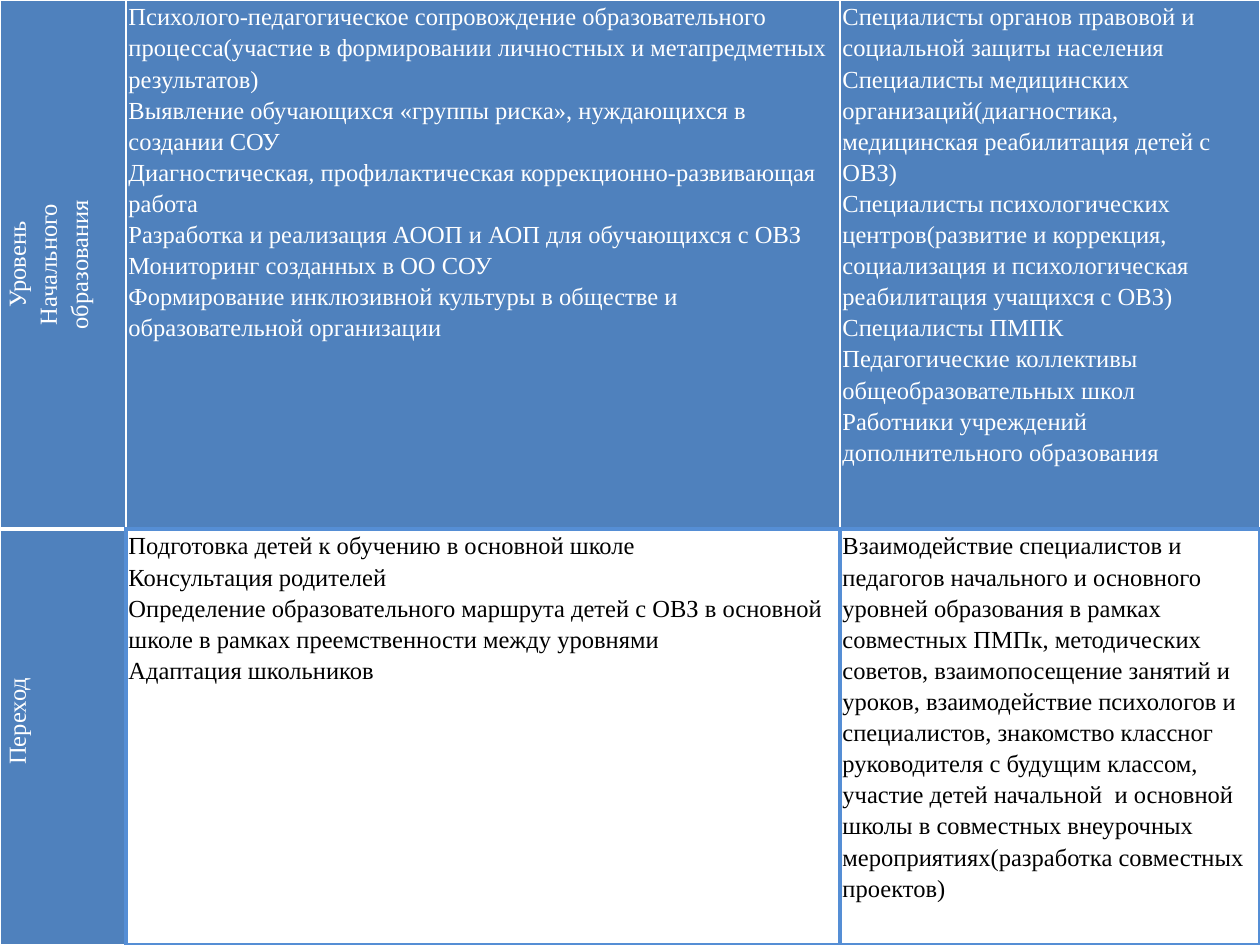
import pptx
import pptx.util
import pptx.dml.color
import pptx.enum.text
import pptx.oxml.ns
import lxml.etree

Pt = pptx.util.Pt
HUES = {"blue": "4F81BD", "edge": "558ED5", "white": "FFFFFF", "black": "000000"}
COLS = [72, 408, 240]
ROWS = [302.4, 237.6]
WHITE = ("white", 1)
EDGE = ("edge", 2.25)
HEAD = {"fill": "blue", "ink": "white"}
BODY = {"fill": "white", "ink": "black", "lines": [EDGE] * 4}
SIDE = {**HEAD, "turn": True}

STAGE = ["Уровень", "Начального", "образования"]
TASKS = [
    "Психолого-педагогическое сопровождение образовательного процесса(участие в формировании личностных и метапредметных результатов)",
    "Выявление обучающихся «группы риска», нуждающихся в создании СОУ",
    "Диагностическая, профилактическая коррекционно-развивающая работа",
    "Разработка и реализация АООП и АОП для обучающихся с ОВЗ",
    "Мониторинг созданных в ОО СОУ",
    "Формирование инклюзивной культуры в обществе и образовательной организации",
]
STAFF = [
    "Специалисты органов правовой и социальной защиты населения",
    "Специалисты медицинских организаций(диагностика, медицинская реабилитация детей с ОВЗ)",
    "Специалисты психологических центров(развитие и коррекция, социализация и психологическая реабилитация учащихся с ОВЗ)",
    "Специалисты ПМПК",
    "Педагогические коллективы общеобразовательных школ",
    "Работники учреждений дополнительного образования",
]
STEPS = [
    "Подготовка детей к обучению в основной школе",
    "Консультация родителей",
    "Определение образовательного маршрута детей с ОВЗ в основной школе в рамках преемственности между уровнями",
    "Адаптация школьников",
]
LINKS = [
    "Взаимодействие специалистов и педагогов начального и основного уровней образования в рамках совместных ПМПк, методических советов, взаимопосещение занятий и уроков, взаимодействие психологов и специалистов, знакомство классног руководителя с будущим классом, участие детей начальной  и основной школы в совместных внеурочных мероприятиях(разработка совместных проектов)",
]


class Deck:
    font = "Times New Roman"
    size = 14
    lead = 1.15
    inset = 1.44

    def __init__(self, wide, high):
        self.prs = pptx.Presentation()
        self.prs.slide_width = Pt(wide)
        self.prs.slide_height = Pt(high)
        self.slide = self.prs.slides.add_slide(self.prs.slide_layouts[6])

    def hue(self, name):
        return pptx.dml.color.RGBColor.from_string(HUES[name])

    def table(self, cols, rows):
        frame = self.slide.shapes.add_table(
            len(rows), len(cols), 0, 0, Pt(sum(cols)), Pt(sum(rows)))
        grid = frame.table
        grid.first_row = grid.horz_banding = False
        for col, wide in zip(grid.columns, cols):
            col.width = Pt(wide)
        for row, high in zip(grid.rows, rows):
            row.height = Pt(high)
        return grid

    def border(self, cell, lines):
        qn = pptx.oxml.ns.qn
        props = cell._tc.get_or_add_tcPr()
        for spot, (side, (name, width)) in enumerate(zip("LRTB", lines)):
            line = lxml.etree.Element(qn("a:ln" + side), w=str(Pt(width)))
            fill = lxml.etree.SubElement(line, qn("a:solidFill"))
            lxml.etree.SubElement(fill, qn("a:srgbClr"), val=HUES[name])
            props.insert(spot, line)

    def cell(self, cell, texts, fill, ink, lines, turn=False, left=inset):
        cell.margin_left, cell.margin_right = Pt(left), Pt(self.inset)
        cell.margin_top = cell.margin_bottom = 0
        cell.fill.solid()
        cell.fill.fore_color.rgb = self.hue(fill)
        self.border(cell, lines)
        if turn:
            cell._tc.get_or_add_tcPr().set("vert", "vert270")
        frame = cell.text_frame
        for spot, text in enumerate(texts):
            para = frame.add_paragraph() if spot else frame.paragraphs[0]
            para.text = text
            para.line_spacing = self.lead
            if turn:
                para.alignment = pptx.enum.text.PP_ALIGN.CENTER
            para.font.name = self.font
            para.font.size = Pt(self.size)
            para.font.color.rgb = self.hue(ink)


def main():
    deck = Deck(720, 540)
    grid = deck.table(COLS, ROWS)
    top = [WHITE, WHITE, WHITE, EDGE]
    deck.cell(grid.cell(0, 0), STAGE, **SIDE, lines=[WHITE] * 3 + [("white", 3)])
    deck.cell(grid.cell(0, 1), TASKS, **HEAD, lines=top)
    deck.cell(grid.cell(0, 2), STAFF, **HEAD, lines=top)
    deck.cell(grid.cell(1, 0), ["Переход"], **SIDE, left=19.5,
              lines=[WHITE, EDGE, ("white", 3), WHITE])
    deck.cell(grid.cell(1, 1), STEPS, **BODY)
    deck.cell(grid.cell(1, 2), LINKS, **BODY)
    deck.prs.save("out.pptx")


if __name__ == "__main__":
    main()
